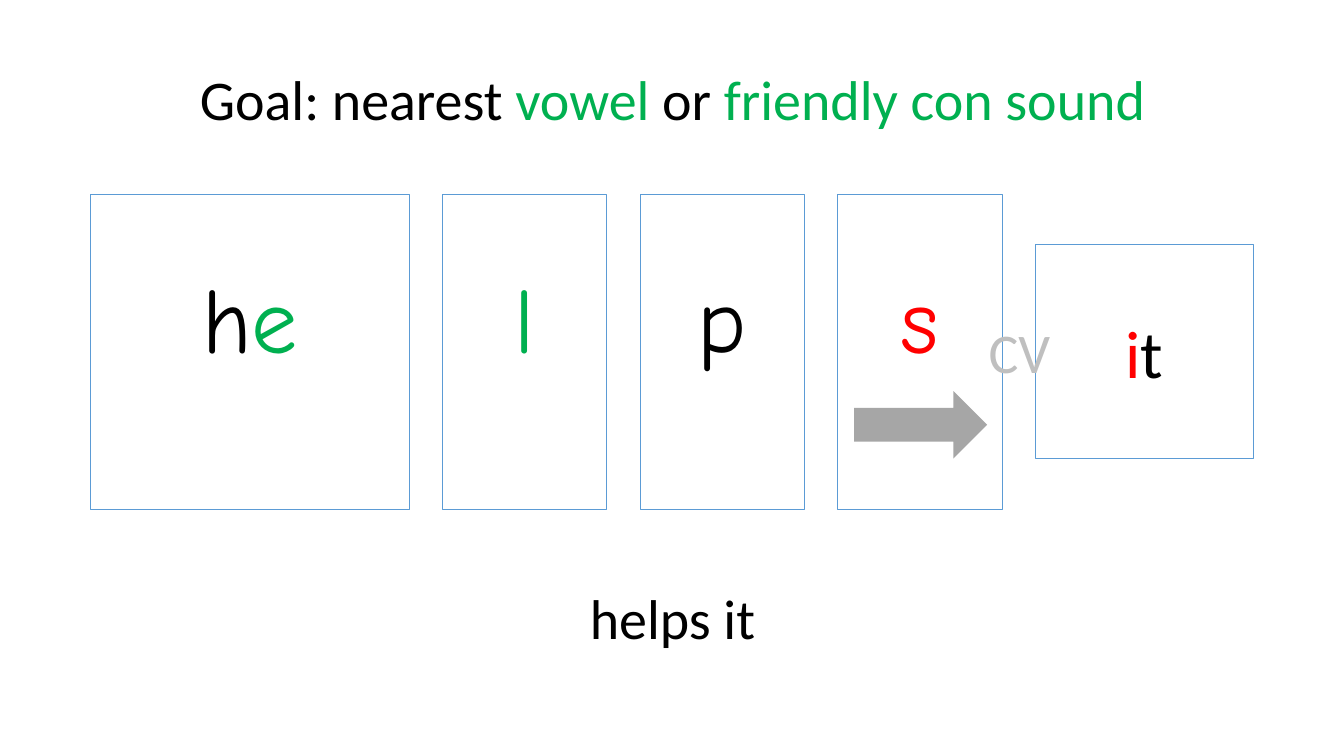
from dataclasses import dataclass

from pptx import Presentation
from pptx.dml.color import RGBColor
from pptx.enum import shapes, text
from pptx.util import Inches, Pt


@dataclass(frozen=True)
class Theme:
    black: str = "000000"
    green: str = "00B050"
    red: str = "FF0000"
    pale: str = "BFBFBF"
    arrow: str = "A6A6A6"
    outline: str = "5B9BD5"
    body_font: str = "Calibri"
    letter_font: str = "Comic Neue"
    body_size: int = 40
    word_size: int = 48
    letter_size: int = 66


THEME = Theme()
GAP = 0.33
CARD_LEFT = 0.9


def write(shape, runs, font=THEME.body_font, size=THEME.body_size, inset=0.05):
    """Fill a shape with one centred paragraph of (wording, colour) runs."""
    frame = shape.text_frame
    frame.word_wrap = True
    frame.vertical_anchor = text.MSO_ANCHOR.TOP
    frame.margin_top = Inches(inset)
    para = frame.paragraphs[0]
    para.alignment = text.PP_ALIGN.CENTER
    for wording, colour in runs:
        span = para.add_run()
        span.text = wording
        span.font.name = font
        span.font.size = Pt(size)
        span.font.color.rgb = RGBColor.from_string(colour)


def add_label(page, left, top, width, runs):
    box = page.shapes.add_textbox(
        Inches(left), Inches(top), Inches(width), Inches(0.77))
    write(box, runs)
    box.text_frame.auto_size = text.MSO_AUTO_SIZE.SHAPE_TO_FIT_TEXT


def add_card(page, left, top, width, height, runs, **style):
    card = page.shapes.add_shape(
        shapes.MSO_SHAPE.RECTANGLE,
        Inches(left), Inches(top), Inches(width), Inches(height))
    card.shadow.inherit = False
    card.fill.background()
    card.line.color.rgb = RGBColor.from_string(THEME.outline)
    card.line.width = Pt(0.75)
    write(card, runs, inset=0.66, **style)


def add_arrow(page, left, top, width, height):
    arrow = page.shapes.add_shape(
        shapes.MSO_SHAPE.RIGHT_ARROW,
        Inches(left), Inches(top), Inches(width), Inches(height))
    arrow.shadow.inherit = False
    arrow.fill.solid()
    arrow.fill.fore_color.rgb = RGBColor.from_string(THEME.arrow)
    arrow.line.fill.background()


def main():
    deck = Presentation()
    deck.slide_width, deck.slide_height = Inches(13.33), Inches(7.5)
    page = deck.slides.add_slide(deck.slide_layouts[6])

    add_label(page, 0.71, 0.59, 11.92, [
        ("Goal: nearest ", THEME.black), ("vowel", THEME.green),
        (" or ", THEME.black), ("friendly con sound", THEME.green)])

    letter_cards = [
        (3.16, [("h", THEME.black), ("e", THEME.green)]),
        (1.63, [("l", THEME.green)]),
        (1.63, [("p", THEME.black)]),
        (1.63, [("s", THEME.red)]),
    ]
    left = CARD_LEFT
    for width, runs in letter_cards:
        add_card(page, left, 1.93, width, 3.13, runs,
                 font=THEME.letter_font, size=THEME.letter_size)
        left += width + GAP
    add_card(page, left, 2.43, 2.16, 2.12,
             [("i", THEME.red), ("t", THEME.black)], size=THEME.word_size)

    add_label(page, 9.11, 3.1, 2, [("CV", THEME.pale)])
    add_arrow(page, 8.47, 3.88, 1.32, 0.67)
    add_label(page, 4.89, 5.74, 3.56, [("helps it", THEME.black)])
    deck.save("out.pptx")


if __name__ == "__main__":
    main()
